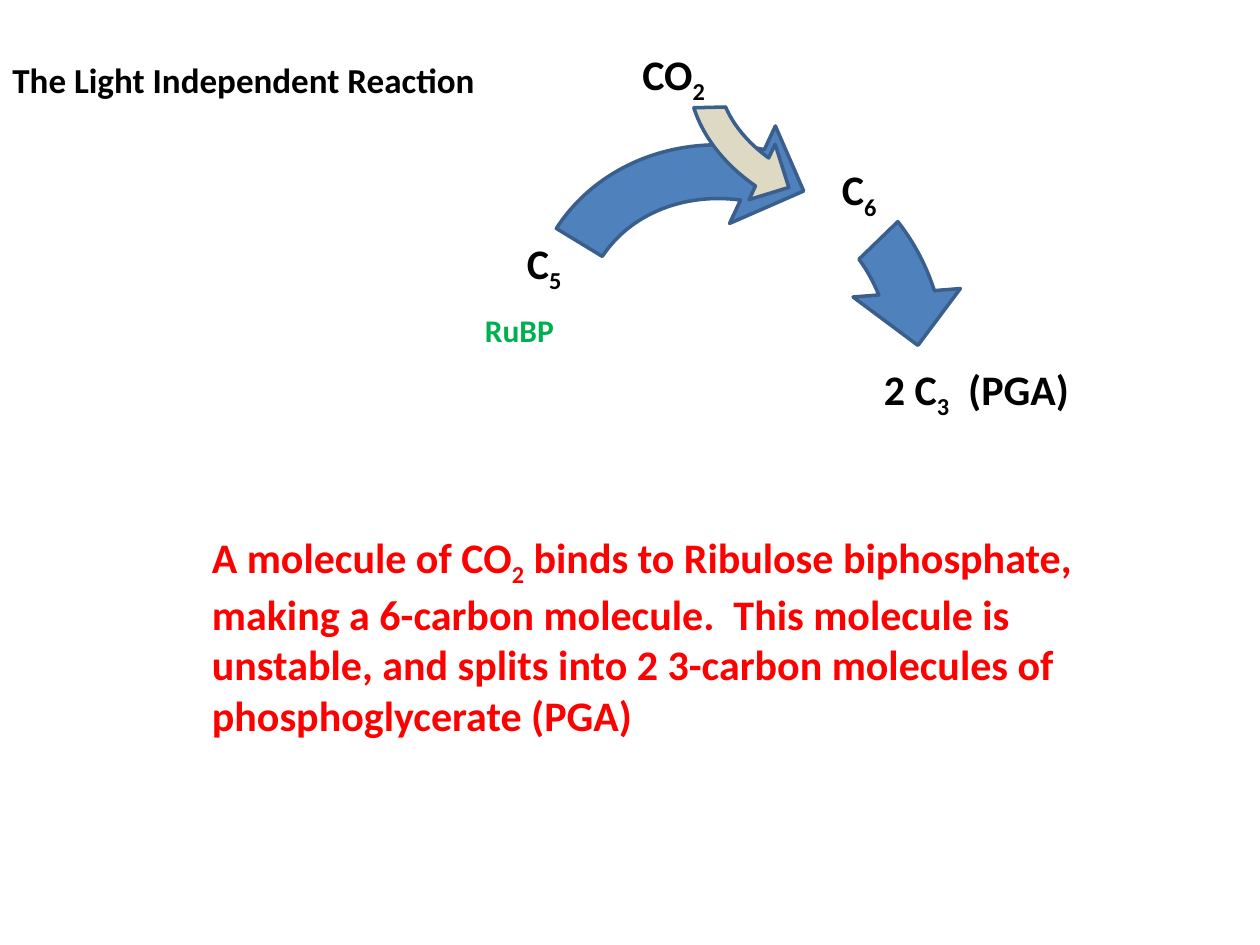
from collections import namedtuple

from lxml import etree
from pptx import Presentation
from pptx.dml.color import RGBColor
from pptx.enum.shapes import MSO_SHAPE
from pptx.enum.text import MSO_AUTO_SIZE
from pptx.util import Inches, Pt

CIRCULAR_ARROW = MSO_SHAPE.CIRCULAR_ARROW
FIT_SHAPE = MSO_AUTO_SIZE.SHAPE_TO_FIT_TEXT
CELL = Inches(1) / 12
FONT = "Calibri"
BLACK, RED, GREEN = "000000", "FF0000", "00B050"
BLUE, SAND, OUTLINE = "4F81BD", "DDD9C3", "3A5F8C"

Box = namedtuple("Box", "column row columns rows")


def color(value):
    return RGBColor.from_string(value)


def within(box, column, row, columns, rows):
    return Box(box.column + column, box.row + row, columns, rows)


def lengths(box):
    return [round(cells * CELL) for cells in box]


def add_text(slide, box, parts, size=24, fill=BLACK):
    shape = slide.shapes.add_textbox(*lengths(box))
    frame = shape.text_frame
    frame.word_wrap = True
    frame.auto_size = FIT_SHAPE
    paragraph = frame.paragraphs[0]
    for index, part in enumerate(parts):
        run = paragraph.add_run()
        run.text = part
        run.font.name = FONT
        run.font.size = Pt(size)
        run.font.bold = True
        run.font.color.rgb = color(fill)
        if index % 2:
            run.font._element.set("baseline", "-25000")
    return paragraph


def add_arrow(slide, box, rotation, start, fill, flipped=False):
    shape = slide.shapes.add_shape(CIRCULAR_ARROW, *lengths(box))
    shape.shadow.inherit = False
    shape.rotation = rotation
    if flipped:
        shape._element.spPr.xfrm.set("flipH", "1")
    for index, value in enumerate((0.125, 11.423, 204.577, start, 0.125)):
        shape.adjustments[index] = value
    shape.fill.solid()
    shape.fill.fore_color.rgb = color(fill)
    shape.line.color.rgb = color(OUTLINE)
    shape.line.width = Pt(2)


def add_heading(slide, box):
    paragraph = add_text(slide, box, ["The Light Independent Reaction"], size=20)
    properties = paragraph._p.get_or_add_pPr()
    hanging = Inches(0.44)
    properties.set("marL", str(hanging))
    properties.set("indent", str(-hanging))


def add_carbon_fixation(slide, box):
    add_text(slide, within(box, 4, 18, 23, 6.1), ["C", "5"])
    add_text(slide, within(box, 0, 25, 20, 4.8), ["RuBP"], size=18, fill=GREEN)
    add_arrow(slide, within(box, 4.5, 5.6, 41, 45), 295.2, 165.667, BLUE)
    add_arrow(slide, within(box, 22.2, -9.3, 23.3, 30.5), 295.2, 177.986, SAND, True)
    add_text(slide, within(box, 15, 0, 13, 6.1), ["CO", "2"])
    add_text(slide, within(box, 34, 11, 17, 6.1), ["C", "6"])
    add_arrow(slide, within(box, 6.6, 7.6, 41, 45), 355.5, 192.255, BLUE)
    add_text(slide, within(box, 38, 30, 24, 6.1), ["2 C", "3", "  (PGA)"])


def add_explanation(slide, box):
    add_text(slide, box, [
        "A molecule of CO",
        "2",
        " binds to Ribulose biphosphate, making a 6-carbon molecule.  "
        "This molecule is unstable, and splits into 2 3-carbon molecules "
        "of phosphoglycerate (PGA)",
    ], fill=RED)


def main():
    presentation = Presentation()
    presentation.slide_width = Inches(10)
    presentation.slide_height = Inches(7.5)
    slide = presentation.slides.add_slide(presentation.slide_layouts[6])
    add_heading(slide, Box(0, 5, 105, 8.9))
    add_carbon_fixation(slide, Box(45, 4, 62, 37))
    add_explanation(slide, Box(19, 50, 87, 25.4))
    presentation.save("out.pptx")


if __name__ == "__main__":
    main()
